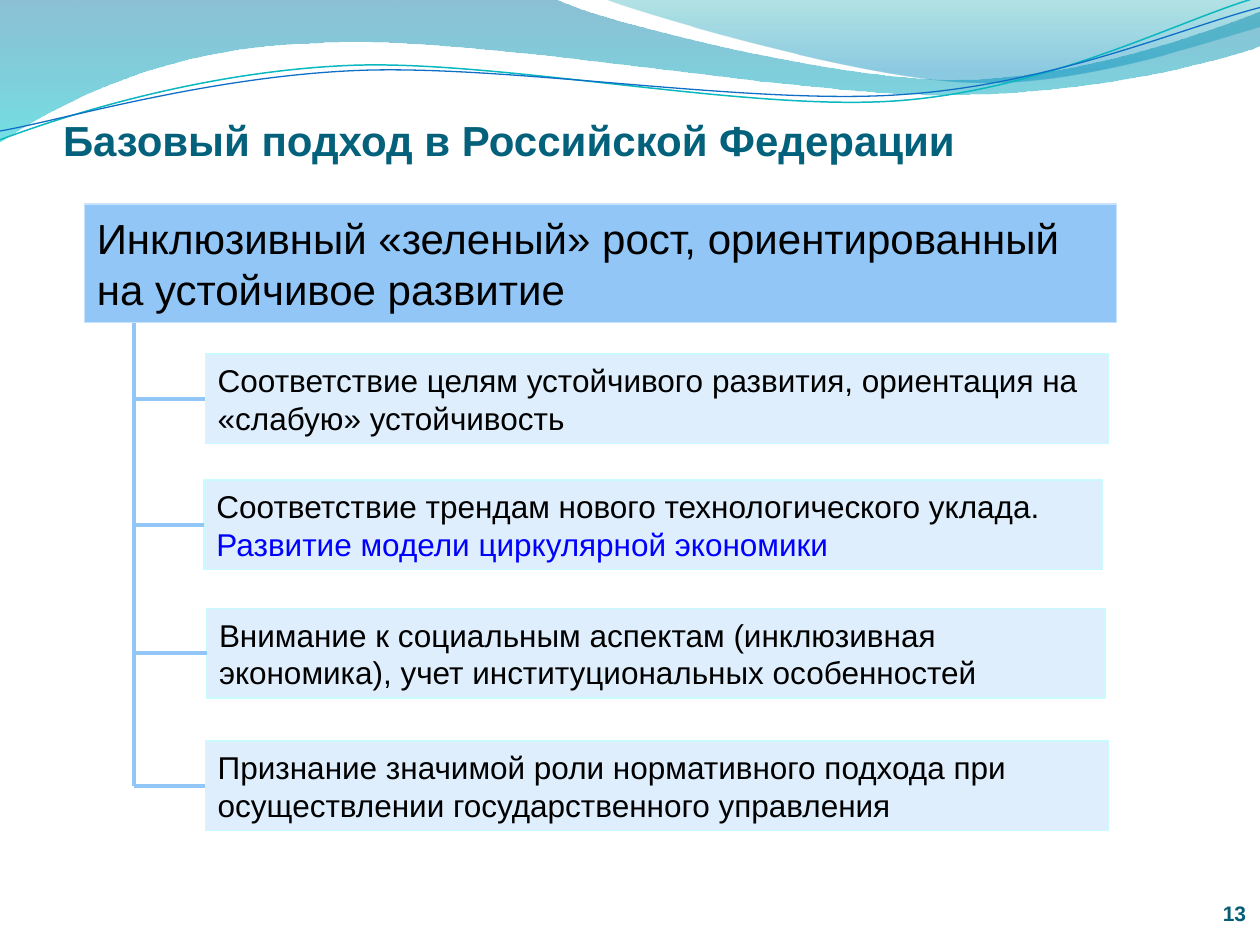
from pptx import Presentation
from pptx.dml.color import RGBColor
from pptx.enum.shapes import MSO_CONNECTOR as CONN, MSO_SHAPE as SHAPE
from pptx.enum.text import MSO_ANCHOR as ANCHOR, PP_ALIGN as ALIGN
from pptx.oxml.ns import qn
from pptx.oxml.xmlchemy import OxmlElement
from pptx.util import Inches, Pt

rgb = RGBColor.from_string


def add_outline(start, segments, closed):
    """Draw an outline of lines (one point) and cubic curves (three points)."""
    builder = s.shapes.build_freeform(*map(Inches, start))
    builder.add_line_segments([(Inches(x), Inches(y)) for seg in segments for x, y in seg],
                              close=closed)
    sp = builder.convert_to_shape()
    sp.shadow.inherit = False
    # Merge each run of three line points into one cubic curve
    steps = iter(list(sp._element.iter(qn("a:lnTo"))))
    for seg in segments:
        parts = [next(steps) for _ in seg]
        if len(parts) == 3:
            curve = OxmlElement("a:cubicBezTo")
            parts[0].addprevious(curve)
            for part in parts:
                curve.append(part[0])
                part.getparent().remove(part)
    return sp


def write(sp, runs, size, anchor, bold=False):
    """Put (text, colour) runs into the shape's first paragraph."""
    tf = sp.text_frame
    tf.word_wrap = True
    tf.vertical_anchor = anchor
    p = tf.paragraphs[0]
    p.alignment = ALIGN.LEFT
    for text, color in runs:
        r = p.add_run()
        r.text = text
        r.font.name, r.font.size, r.font.bold = "Arial", Pt(size), bold
        r.font.color.rgb = rgb(color)
    return tf


prs = Presentation()
prs.slide_width, prs.slide_height = Inches(10), Inches(7.5)
s = prs.slides.add_slide(prs.slide_layouts[6])

# Gradient waves: start, segments, stops (position, colour, opacity %)
waves = [
    ((0, 0),
     [[(4.4, -0.01)],
      [(4.76, 0.17), (6.64, 0.63), (7.58, 0.63)],
      [(8.53, 0.63), (9.58, 0.26), (10, 0.09)],
      [(10.01, 0.36)],
      [(9.83, 0.44), (8.7, 0.76), (7.46, 0.75)],
      [(6.22, 0.75), (3.82, 0.28), (2.57, 0.34)],
      [(1.29, 0.36), (0.46, 0.83), (-0.01, 1.13)],
      [(0, 0)]],
     [(0, "0074A1", 45), (1, "00C6CF", 55)]),
    ((4.79, -0.01),
     [[(5.09, 0.11), (6.82, 0.62), (7.69, 0.65)],
      [(8.56, 0.69), (9.61, 0.32), (10, 0.21)],
      [(10, 0)],
      [(4.79, -0.01)]],
     [(0, "00A1A9", 30), (0.8, "008BBF", 45)]),
]
for start, segments, stops in waves:
    sp = add_outline(start, segments, True)
    sp.line.fill.background()
    sp.fill.gradient()
    sp.fill.gradient_angle = 270
    for stop, (position, color, opacity) in zip(sp.fill.gradient_stops, stops):
        stop.position = position
        stop.color.rgb = rgb(color)
    for clr, (_, _, opacity) in zip(sp._element.spPr.iter(qn("a:srgbClr")), stops):
        alpha = OxmlElement("a:alpha")
        alpha.set("val", str(opacity * 1000))
        clr.append(alpha)

# Thin wave lines
curves = [
    ((0, 1.11),
     [[(0.48, 0.93), (1.58, 0.57), (2.77, 0.52)],
      [(3.95, 0.47), (5.93, 0.89), (7.13, 0.8)],
      [(8.33, 0.71), (9.38, 0.15), (9.98, -0.02)]], "0AB8BF", 0.85),
    ((0, 1.04),
     [[(0.47, 0.96), (1.64, 0.61), (2.83, 0.56)],
      [(4.03, 0.51), (5.97, 0.84), (7.17, 0.75)],
      [(8.36, 0.67), (9.41, 0.21), (10, 0.06)]], "0F6FC6", 0.75),
]
for start, segments, color, width in curves:
    sp = add_outline(start, segments, False)
    sp.fill.background()
    sp.line.color.rgb = rgb(color)
    sp.line.width = Pt(width)

# Title and slide number
labels = [
    ((0.5, 0.77, 9.08, 0.54), "Базовый подход в Российской Федерации", 24, "04617B", ALIGN.LEFT, 0.05),
    ((8.67, 6.95, 1.22, 0.4), "13", 12, "045D75", ALIGN.RIGHT, 0),
]
for place, text, size, color, align, top in labels:
    sp = s.shapes.add_textbox(*map(Inches, place))
    tf = write(sp, [(text, color)], size, ANCHOR.BOTTOM, bold=True)
    tf.margin_left = tf.margin_right = tf.margin_bottom = 0
    tf.margin_top = Inches(top)
    tf.paragraphs[0].alignment = align

# Main box, then the four principles: place, (fill, opacity %, line, size), runs
PALE = ("C8E3FB", 60, "C9FAFC", 18)
boxes = [
    ((0.67, 1.62, 8.19, 0.94), ("91C6F7", 100, "C8E3FB", 24),
     [("Инклюзивный «зеленый» рост, ориентированный на устойчивое развитие", "000000")]),
    ((1.63, 2.81, 7.17, 0.71), PALE,
     [("Соответствие целям устойчивого развития, ориентация на «слабую» устойчивость", "000000")]),
    ((1.62, 3.81, 7.13, 0.71), PALE,
     [("Соответствие трендам нового технологического уклада. ", "000000"),
      ("Развитие модели циркулярной экономики", "0000FF")]),
    ((1.64, 4.83, 7.13, 0.71), PALE,
     [("Внимание к социальным аспектам (инклюзивная экономика), "
       "учет институциональных особенностей", "000000")]),
    ((1.63, 5.88, 7.17, 0.71), PALE,
     [("Признание значимой роли нормативного подхода при "
       "осуществлении государственного управления", "000000")]),
]
drawn = []
for place, (fill, opacity, line, size), runs in boxes:
    sp = s.shapes.add_shape(SHAPE.RECTANGLE, *map(Inches, place))
    sp.shadow.inherit = False
    sp.fill.solid()
    sp.fill.fore_color.rgb = rgb(fill)
    if opacity < 100:
        alpha = OxmlElement("a:alpha")
        alpha.set("val", str(opacity * 1000))
        sp._element.spPr.find(qn("a:solidFill"))[0].append(alpha)
    sp.line.color.rgb = rgb(line)
    sp.line.width = Pt(0.75)
    write(sp, runs, size, ANCHOR.MIDDLE)
    drawn.append(sp)

# Tree: a trunk below the main box and a branch to each principle
main, *principles = drawn
trunk_x = Inches(1.06)
middles = [sp.top + sp.height // 2 for sp in principles]
links = [s.shapes.add_connector(CONN.STRAIGHT, trunk_x, main.top + main.height,
                                trunk_x, middles[-1])]
for sp, y in zip(principles, middles):
    branch = s.shapes.add_connector(CONN.STRAIGHT, trunk_x, y, sp.left, y)
    branch.end_connect(sp, 1)
    links.append(branch)
for link in links:
    link.line.color.rgb = rgb("91C6F7")
    link.line.width = Pt(2.25)
    link._element.spPr.append(OxmlElement("a:effectLst"))

prs.save("out.pptx")
